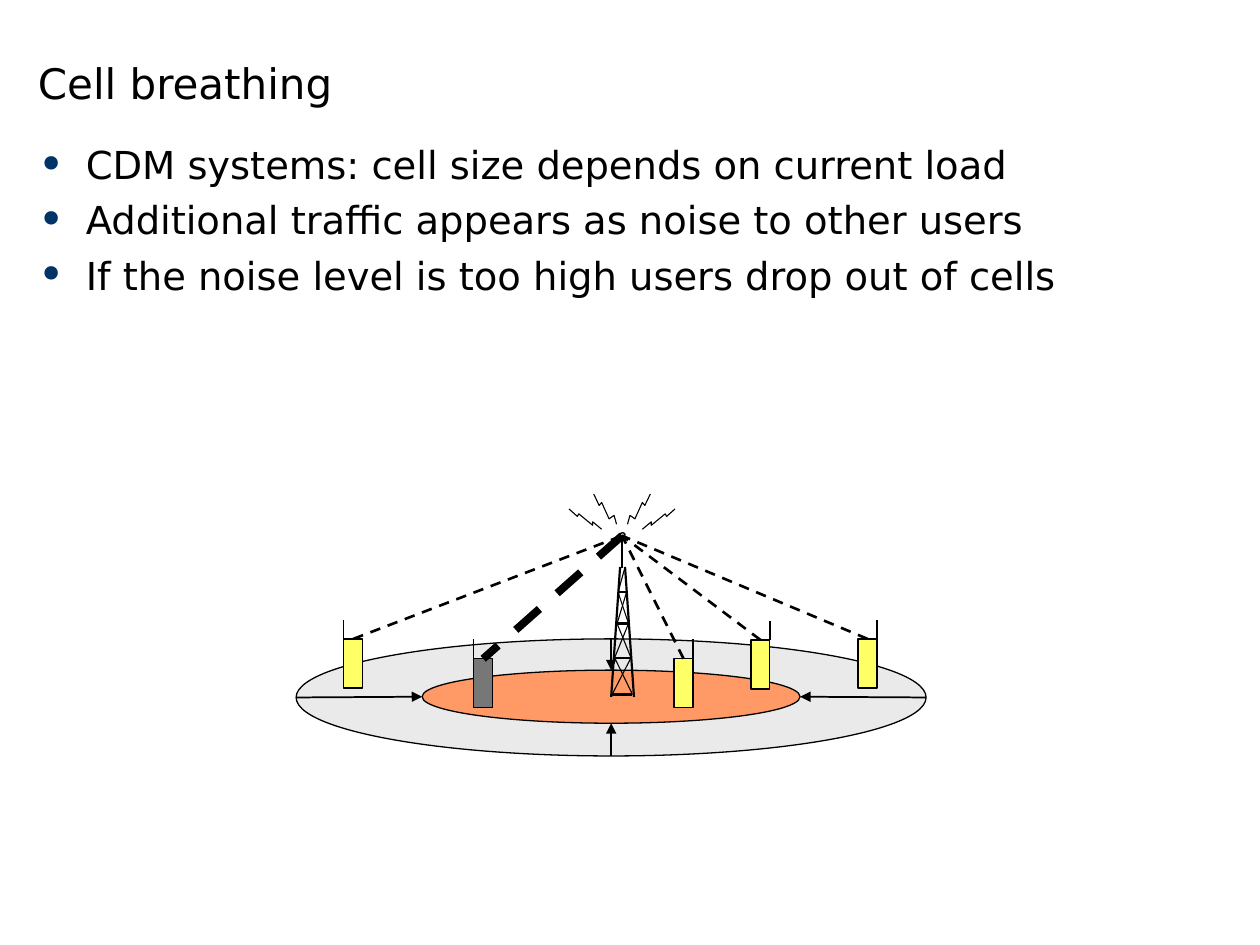
from dataclasses import dataclass
from itertools import pairwise
from typing import Any

from lxml.etree import SubElement
from pptx import Presentation
from pptx.dml.color import RGBColor
from pptx.enum.dml import MSO_LINE
from pptx.enum.shapes import MSO_CONNECTOR, MSO_SHAPE
from pptx.enum.text import MSO_ANCHOR, PP_ALIGN
from pptx.oxml.ns import qn
from pptx.util import Cm, Pt

BLACK = RGBColor(0x00, 0x00, 0x00)
NAVY = RGBColor(0x00, 0x33, 0x66)
PALE_GREY = RGBColor(0xEA, 0xEA, 0xEA)
ORANGE = RGBColor(0xFF, 0x99, 0x66)
YELLOW = RGBColor(0xFF, 0xFF, 0x66)
DARK_GREY = RGBColor(0x77, 0x77, 0x77)
SILVER = RGBColor(0xC0, 0xC0, 0xC0)

FONT = "DejaVu Sans"
INDENT = Cm(0.97)
THIN, OUTLINE, ARROW, STRUT, LINK, JAMMED_LINK = 0.63, 0.75, 1, 1.25, 1.5, 4.5

Point = tuple[float, float]

MAST_X = 12.54
MAST_TIP = (MAST_X, 10.8)
PHONE_WIDTH, PHONE_HEIGHT, ANTENNA_HEIGHT = 0.38, 0.99, 0.39


@dataclass(frozen=True)
class Ring:
    left: float
    top: float
    width: float
    height: float
    color: RGBColor

    def edges(self) -> list[Point]:
        middle_x = self.left + self.width / 2
        middle_y = self.top + self.height / 2
        return [
            (self.left, middle_y),
            (middle_x, self.top + self.height),
            (self.left + self.width, middle_y),
            (middle_x, self.top),
        ]


@dataclass(frozen=True)
class Phone:
    left: float
    top: float
    dropped: bool = False

    def antenna_x(self) -> float:
        return self.left if self.left < MAST_X else self.left + PHONE_WIDTH


@dataclass(frozen=True)
class Rung:
    left: float
    right: float
    height: float


FULL_CELL = Ring(5.97, 12.88, 12.7, 2.36, PALE_GREY)
SHRUNK_CELL = Ring(8.51, 13.51, 7.62, 1.07, ORANGE)
MAST_CAP = Ring(12.5, 10.74, 0.1, 0.08, SILVER)
PHONES = [
    Phone(6.93, 12.88),
    Phone(9.55, 13.28, dropped=True),
    Phone(13.59, 13.28),
    Phone(15.14, 12.9),
    Phone(17.3, 12.88),
]
RUNGS = [
    Rung(12.46, 12.63, 11.94),
    Rung(12.44, 12.67, 12.57),
    Rung(12.39, 12.72, 13.26),
    Rung(12.34, 12.75, 14.0),
]
SPARKS = [
    [(12.95, 10.67), (13.13, 10.52), (13.13, 10.59),
     (13.41, 10.36), (13.44, 10.41), (13.61, 10.26)],
    [(12.65, 10.57), (12.7, 10.39), (12.8, 10.46),
     (12.95, 10.13), (13.0, 10.19), (13.11, 9.96)],
]
STATEMENTS = [
    "CDM systems: cell size depends on current load",
    "Additional traffic appears as noise to other users",
    "If the noise level is too high users drop out of cells",
]


def apply_format(target: Any, values: dict[str, Any]) -> None:
    for attribute, value in values.items():
        setattr(target, attribute, value)


def format_font(font: Any, size: float) -> None:
    apply_format(font, {"name": FONT, "size": Pt(size), "bold": False})
    font.color.rgb = BLACK


def draw_line(canvas: Any, start: Point, end: Point, width: float,
              dashed: bool = False, arrow: bool = False) -> None:
    connector = canvas.add_connector(
        MSO_CONNECTOR.STRAIGHT, *(Cm(value) for value in (*start, *end)))
    connector.line.color.rgb = BLACK
    connector.line.width = Pt(width)
    if dashed:
        connector.line.dash_style = MSO_LINE.DASH
    properties = connector._element.spPr
    if arrow:
        SubElement(properties.find(qn("a:ln")), qn("a:tailEnd"), type="triangle")
    SubElement(properties, qn("a:effectLst"))


def draw_solid(canvas: Any, preset: MSO_SHAPE, bounds: tuple[float, ...],
               color: RGBColor) -> None:
    solid = canvas.add_shape(preset, *(Cm(value) for value in bounds))
    solid.shadow.inherit = False
    solid.fill.solid()
    solid.fill.fore_color.rgb = color
    solid.line.color.rgb = BLACK
    solid.line.width = Pt(OUTLINE)


def draw_ring(canvas: Any, ring: Ring) -> None:
    draw_solid(canvas, MSO_SHAPE.OVAL,
               (ring.left, ring.top, ring.width, ring.height), ring.color)


def draw_spark(canvas: Any, points: list[Point]) -> None:
    corners = [(Cm(x), Cm(y)) for x, y in points]
    builder = canvas.build_freeform(*corners[0])
    builder.add_line_segments(corners[1:], close=False)
    spark = builder.convert_to_shape()
    spark.shadow.inherit = False
    spark.fill.background()
    spark.line.color.rgb = BLACK
    spark.line.width = Pt(THIN)


def draw_tower(canvas: Any) -> None:
    draw_line(canvas, (MAST_X, 11.46), (MAST_X, 10.77), STRUT)
    draw_line(canvas, (12.32, 14.05), (12.5, 11.43), STRUT)
    draw_line(canvas, (12.6, 11.43), (12.78, 14.05), STRUT)
    for rung in RUNGS:
        draw_line(canvas, (rung.left, rung.height), (rung.right, rung.height), STRUT)
    for upper, lower in pairwise(RUNGS):
        draw_line(canvas, (upper.left, upper.height), (lower.right, lower.height), THIN)
        draw_line(canvas, (upper.right, upper.height), (lower.left, lower.height), THIN)
    draw_line(canvas, (RUNGS[0].left, RUNGS[0].height), (12.6, 11.43), THIN)
    draw_ring(canvas, MAST_CAP)


def draw_phone(canvas: Any, phone: Phone) -> None:
    draw_solid(canvas, MSO_SHAPE.RECTANGLE,
               (phone.left, phone.top, PHONE_WIDTH, PHONE_HEIGHT),
               DARK_GREY if phone.dropped else YELLOW)
    antenna_x = phone.antenna_x()
    draw_line(canvas, (antenna_x, phone.top),
              (antenna_x, phone.top - ANTENNA_HEIGHT), OUTLINE)


def draw_link(canvas: Any, phone: Phone) -> None:
    phone_top = (phone.left + PHONE_WIDTH / 2, phone.top)
    if phone.dropped:
        draw_line(canvas, MAST_TIP, phone_top, JAMMED_LINK, dashed=True)
    else:
        draw_line(canvas, phone_top, MAST_TIP, LINK, dashed=True)


def write_title(heading: Any) -> None:
    apply_format(heading, {"left": Cm(0.51), "top": Cm(0),
                           "width": Cm(16.79), "height": Cm(2.31)})
    heading.text_frame.text = "Cell breathing"
    heading.text_frame.vertical_anchor = MSO_ANCHOR.BOTTOM
    paragraph = heading.text_frame.paragraphs[0]
    paragraph.alignment = PP_ALIGN.LEFT
    format_font(paragraph.font, 24)


def write_statements(canvas: Any) -> None:
    frame = canvas.add_textbox(Cm(0.51), Cm(2.72), Cm(24.41), Cm(14.86)).text_frame
    frame.word_wrap = True
    for position, statement in enumerate(STATEMENTS):
        paragraph = frame.add_paragraph() if position else frame.paragraphs[0]
        paragraph.text = statement
        properties = paragraph._p.get_or_add_pPr()
        properties.set("marL", str(INDENT))
        properties.set("indent", str(-INDENT))
        bullet_color = SubElement(properties, qn("a:buClr"))
        SubElement(bullet_color, qn("a:srgbClr"), val=str(NAVY))
        SubElement(properties, qn("a:buSzPct"), val="120000")
        SubElement(properties, qn("a:buFont"), typeface=FONT)
        SubElement(properties, qn("a:buChar"), char="•")
        paragraph.space_before = Pt(5.2 if position else 0)
        format_font(paragraph.font, 22)


def main() -> None:
    deck = Presentation()
    apply_format(deck, {"slide_width": Cm(25.4), "slide_height": Cm(19.05)})
    slide = deck.slides.add_slide(deck.slide_layouts[5])
    canvas = slide.shapes
    write_title(canvas.title)
    write_statements(canvas)
    for ring in (FULL_CELL, SHRUNK_CELL):
        draw_ring(canvas, ring)
    waves = canvas.add_group_shape().shapes
    for spark in SPARKS:
        draw_spark(waves, spark)
        draw_spark(waves, [(2 * MAST_X - x, y) for x, y in spark])
    draw_tower(canvas.add_group_shape().shapes)
    for phone in PHONES:
        draw_phone(canvas.add_group_shape().shapes, phone)
    for phone in PHONES:
        draw_link(canvas, phone)
    for outer, inner in zip(FULL_CELL.edges(), SHRUNK_CELL.edges()):
        draw_line(canvas, outer, inner, ARROW, arrow=True)
    deck.save("out.pptx")


if __name__ == "__main__":
    main()
